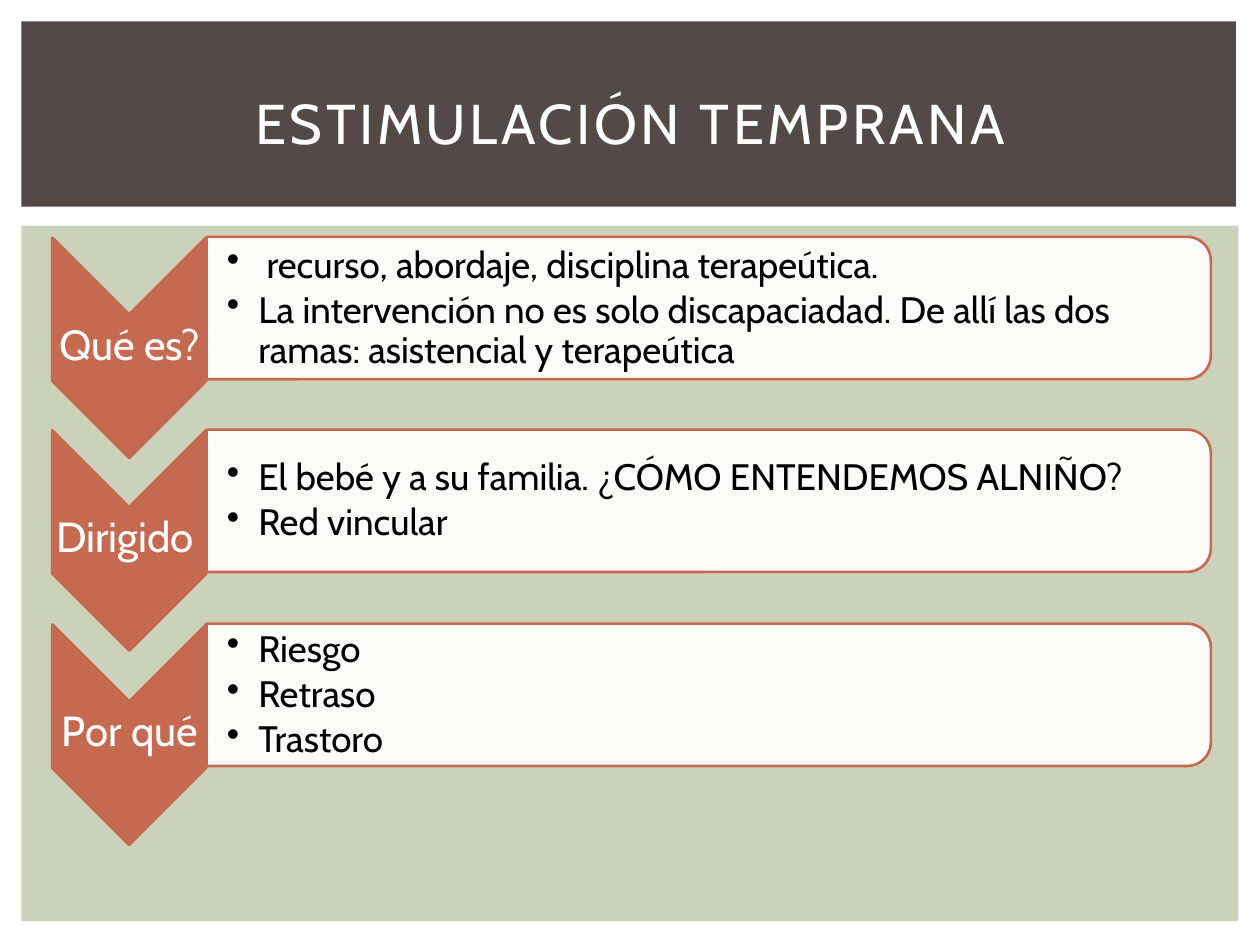
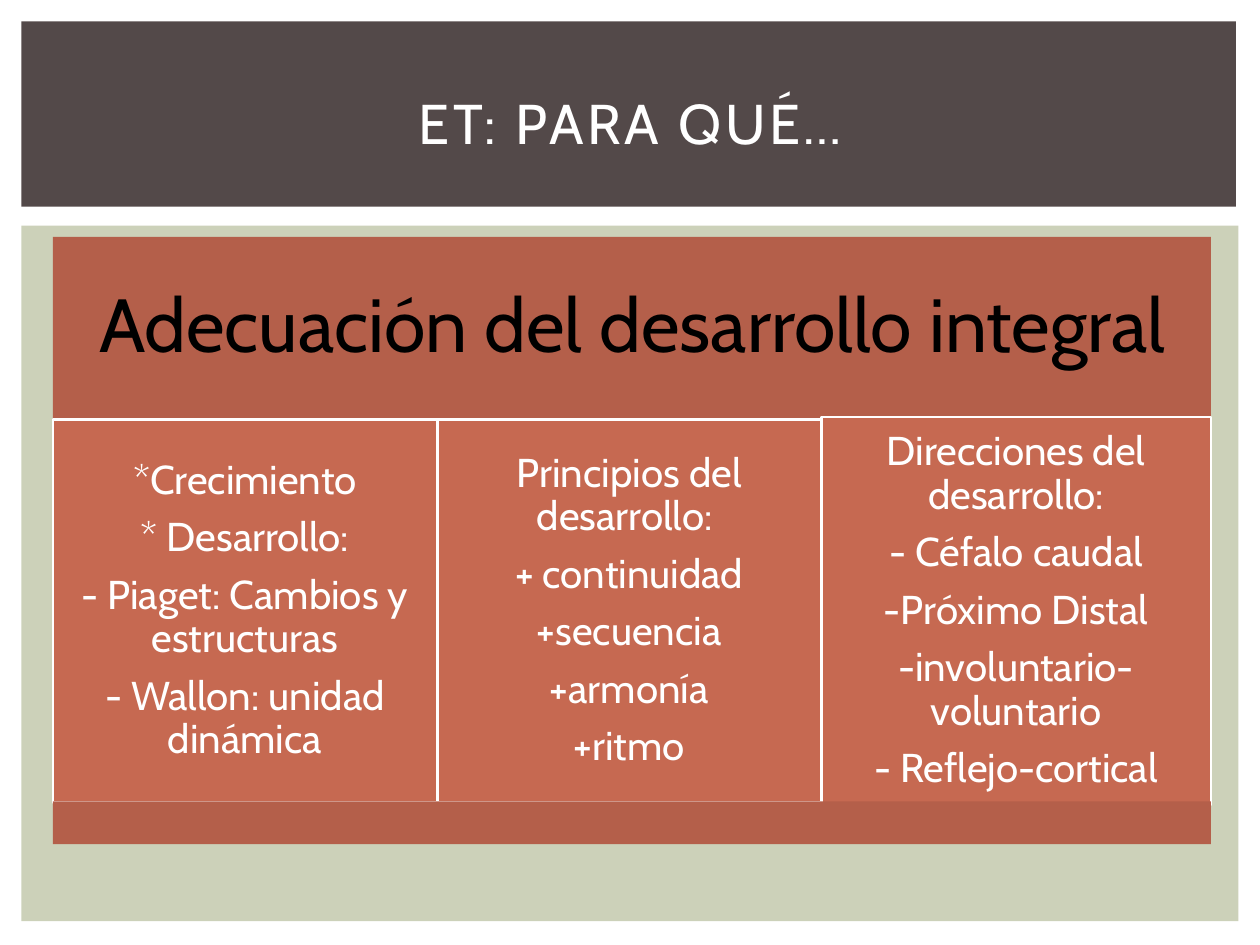
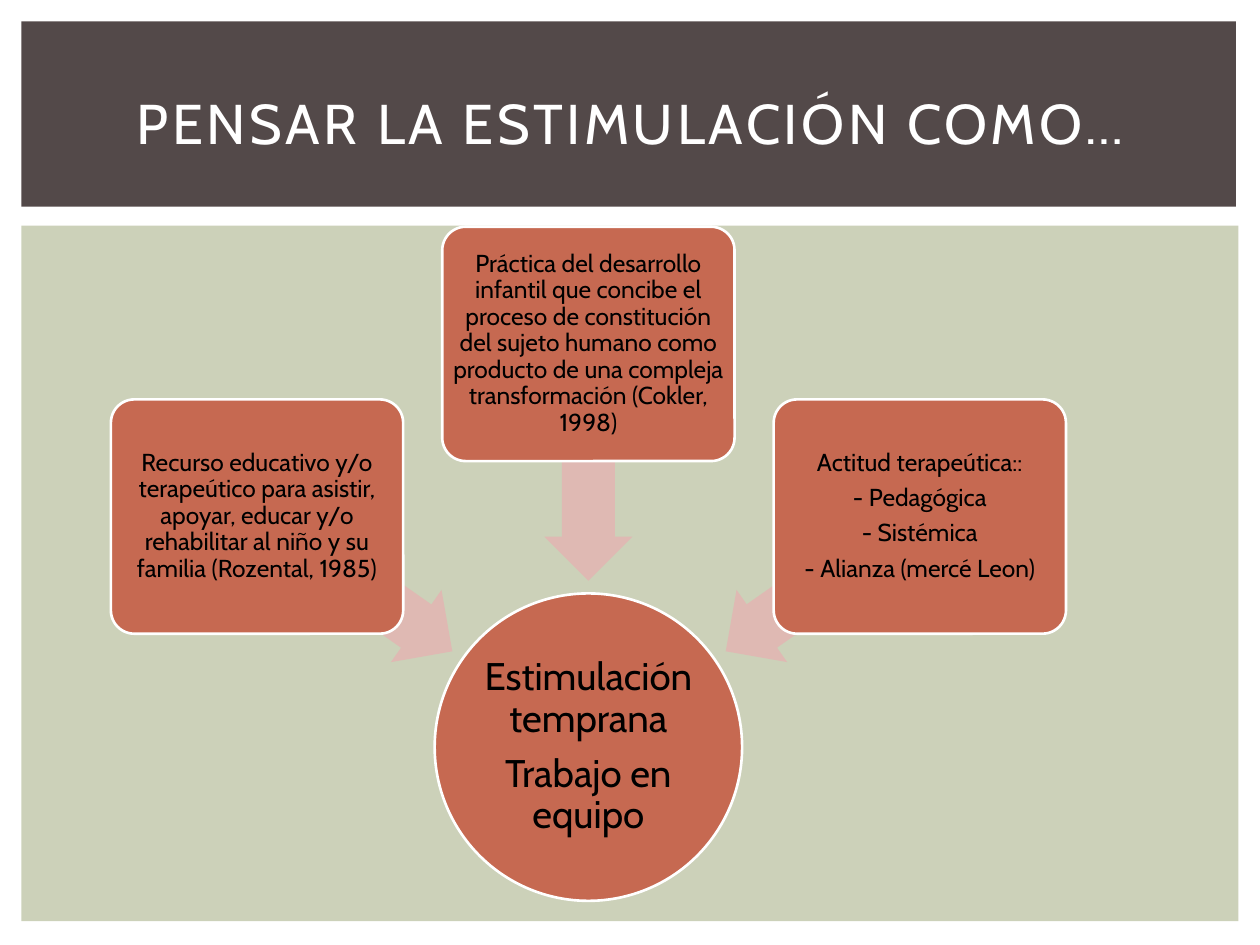
"""Build three slides on early stimulation with a shared title band and panel."""
from dataclasses import dataclass

from lxml.etree import SubElement
from pptx import Presentation
from pptx.dml.color import RGBColor
from pptx.enum.shapes import MSO_SHAPE
from pptx.enum.text import MSO_ANCHOR, PP_ALIGN
from pptx.oxml.ns import qn
from pptx.util import Pt

PIXEL = 9144
FONT = "Cabin"
WHITE, BLACK = "FFFFFF", "000000"
SAGE, BROWN = "CCD1B9", "534949"
CLAY, DARK_CLAY, PINK = "C66951", "B45F4A", "DFB9B3"


@dataclass(frozen=True)
class Box:
    """A rectangle in whole pixels, 100 to the inch."""
    left: int
    top: int
    width: int
    height: int

    def emu(self) -> tuple[int, ...]:
        return tuple(value * PIXEL for value in (self.left, self.top, self.width, self.height))

    def quarter_turned(self) -> "Box":
        """Return the frame that covers this box once rotated by 90 degrees."""
        shift = (self.width - self.height) // 2
        return Box(self.left + shift, self.top - shift, self.height, self.width)


@dataclass(frozen=True)
class TextStyle:
    """How the paragraphs of one text look."""
    size: int
    color: str
    insets: tuple[int, int, int, int] = (2, 2, 2, 2)
    space_after: float = 0.35
    bullet: bool = False


@dataclass(frozen=True)
class Row:
    """A chevron label with its bulleted card."""
    label: str
    points: tuple[str, ...]


@dataclass(frozen=True)
class Idea:
    """A card whose arrow points at the central circle."""
    card_top: int
    arrow_left: int
    arrow_top: int
    rotation: int
    lines: tuple[str, ...]


TITLE_BOX = Box(42, 39, 917, 115)
LABEL_STYLE = TextStyle(24, WHITE)
POINT_STYLE = TextStyle(21, BLACK, (16, 1, 1, 1), 0.15, True)
HEADING_STYLE = TextStyle(43, BLACK, (18, 18, 18, 18))
COLUMN_STYLE = TextStyle(23, WHITE, (10, 10, 10, 10))
CIRCLE_STYLE = TextStyle(22, BLACK)
IDEA_STYLE = TextStyle(14, BLACK, (3, 3, 3, 3))

ROWS = (
    Row("Qué es?", (
        " recurso, abordaje, disciplina terapeútica.",
        "La intervención no es solo discapaciadad. De allí las dos ramas: asistencial y terapeútica",
    )),
    Row("Dirigido ", ("El bebé y a su familia. ¿CÓMO ENTENDEMOS ALNIÑO?", "Red vincular")),
    Row("Por qué", ("Riesgo", "Retraso", "Trastoro")),
)
COLUMNS = (
    (Box(42, 333, 305, 304), ("*Crecimiento", "* Desarrollo:", "- Piaget: Cambios y estructuras",
                              "- Wallon: unidad dinámica")),
    (Box(347, 333, 305, 304), ("Principios del desarrollo: ", "+ continuidad", "+secuencia",
                               "+armonía", "+ritmo")),
    (Box(652, 331, 309, 308), ("Direcciones del desarrollo:", "- Céfalo caudal", "-Próximo Distal",
                               "-involuntario-voluntario", "- Reflejo-cortical")),
)
IDEAS = (
    Idea(317, 188, 428, 215, (
        "Recurso educativo y/o terapeútico para asistir, apoyar, educar y/o rehabilitar "
        "al niño y su familia (Rozental, 1985)",)),
    Idea(180, 373, 332, 270, (
        "Práctica del desarrollo infantil que concibe el proceso de constitución del sujeto "
        "humano como producto de una compleja transformación (Cokler, 1998)",)),
    Idea(317, 559, 428, 325, (
        "Actitud terapeútica::", "- Pedagógica", "- Sistémica", "- Alianza (mercé Leon)")),
)


def rgb(color: str) -> RGBColor:
    """Turn a hex string into a colour."""
    return RGBColor.from_string(color)


def add_figure(slide, kind, box: Box, fill: str, line: str | None = None, rotation: int = 0):
    """Add a flat preset shape with an optional outline."""
    shape = slide.shapes.add_shape(kind, *box.emu())
    shape.shadow.inherit = False
    shape.rotation = rotation
    shape.fill.solid()
    shape.fill.fore_color.rgb = rgb(fill)
    if line:
        shape.line.color.rgb = rgb(line)
        shape.line.width = Pt(1.5)
    else:
        shape.line.fill.background()
    return shape


def set_font(font, size: int, color: str) -> None:
    """Apply the deck font with a size and colour."""
    font.name = FONT
    font.size = Pt(size)
    font.color.rgb = rgb(color)


def add_bullet(para) -> None:
    """Give a paragraph a hanging round bullet."""
    properties = para._p.get_or_add_pPr()
    properties.set("marL", str(25 * PIXEL))
    properties.set("indent", str(-25 * PIXEL))
    SubElement(properties, qn("a:buChar")).set("char", "•")


def write(shape, lines: tuple[str, ...], style: TextStyle) -> None:
    """Fill a shape with one paragraph per line."""
    frame = shape.text_frame
    frame.word_wrap = True
    frame.vertical_anchor = MSO_ANCHOR.MIDDLE
    (frame.margin_left, frame.margin_top,
     frame.margin_right, frame.margin_bottom) = (inset * PIXEL for inset in style.insets)
    for index, line in enumerate(lines):
        para = frame.add_paragraph() if index else frame.paragraphs[0]
        para.text = line
        para.alignment = PP_ALIGN.LEFT if style.bullet else PP_ALIGN.CENTER
        if style.bullet:
            add_bullet(para)
        para.line_spacing = 0.9
        para.space_after = Pt(style.size * style.space_after)
        set_font(para.font, style.size, style.color)


def add_text(slide, box: Box, lines: tuple[str, ...], style: TextStyle) -> None:
    """Add a text box."""
    write(slide.shapes.add_textbox(*box.emu()), lines, style)


def move_bands_to_layout(slide) -> None:
    """Draw the panel and title band and hand them to the slide's layout."""
    bands = ((Box(17, 179, 966, 552), SAGE), (Box(17, 17, 964, 147), BROWN))
    for position, (box, color) in enumerate(bands, start=2):
        band = add_figure(slide, MSO_SHAPE.RECTANGLE, box, color)
        slide.slide_layout.shapes.element.insert(position, band.element)


def add_page(deck, title: str):
    """Add a title-only slide and format its title."""
    page = deck.slides.add_slide(deck.slide_layouts[5])
    heading = page.shapes.title
    heading.left, heading.top, heading.width, heading.height = TITLE_BOX.emu()
    heading.text_frame.vertical_anchor = MSO_ANCHOR.MIDDLE
    para = heading.text_frame.paragraphs[0]
    para.alignment = PP_ALIGN.CENTER
    set_font(para.font, 32, WHITE)
    span = para.add_run()
    span.text = title
    span._r.get_or_add_rPr().set("spc", "200")
    return page


def draw_rows(page) -> None:
    """Draw the chevron list."""
    for index, row in enumerate(ROWS):
        top = 188 + index * 153 + index // 2
        chevron = Box(42, top, 122, 175).quarter_turned()
        add_figure(page, MSO_SHAPE.CHEVRON, chevron, CLAY, CLAY, 90)
        add_text(page, Box(42, top + 61, 122, 52), (row.label,), LABEL_STYLE)
        frame = Box(164, top, 797, 113).quarter_turned()
        card = add_figure(page, MSO_SHAPE.ROUND_2_SAME_RECTANGLE, frame, WHITE, CLAY, 90)
        color = card.element.spPr.find(qn("a:solidFill"))[0]
        SubElement(color, qn("a:alpha")).set("val", "90000")
        add_text(page, Box(164, top + 6, 792, 102), row.points, POINT_STYLE)


def draw_columns(page) -> None:
    """Draw the heading, its three columns and the closing strip."""
    heading = add_figure(page, MSO_SHAPE.RECTANGLE, Box(42, 188, 919, 145), DARK_CLAY)
    write(heading, ("Adecuación del desarrollo integral",), HEADING_STYLE)
    for box, lines in COLUMNS:
        write(add_figure(page, MSO_SHAPE.RECTANGLE, box, CLAY, WHITE), lines, COLUMN_STYLE)
    add_figure(page, MSO_SHAPE.RECTANGLE, Box(42, 636, 919, 34), DARK_CLAY)


def draw_ideas(page) -> None:
    """Draw the circle and the three cards that point at it."""
    circle = add_figure(page, MSO_SHAPE.OVAL, Box(345, 471, 244, 244), CLAY, WHITE)
    write(circle, ("Estimulación temprana", "Trabajo en equipo"), CIRCLE_STYLE)
    for index, idea in enumerate(IDEAS):
        arrow_box = Box(idea.arrow_left, idea.arrow_top, 188, 70)
        arrow = add_figure(page, MSO_SHAPE.LEFT_ARROW, arrow_box, PINK, rotation=idea.rotation)
        arrow.adjustments[0] = 0.6
        card_box = Box(88 + index * 263, idea.card_top, 232, 186)
        card = add_figure(page, MSO_SHAPE.ROUNDED_RECTANGLE, card_box, CLAY, WHITE)
        card.adjustments[0] = 0.1
        write(card, idea.lines, IDEA_STYLE)


def main() -> None:
    """Build and save the deck."""
    deck = Presentation()
    deck.slide_width, deck.slide_height = 1000 * PIXEL, 750 * PIXEL
    pages = (
        ("ESTIMULACIÓN TEMPRANA", draw_rows),
        ("ET: PARA QUÉ…", draw_columns),
        ("PENSAR LA ESTIMULACIÓN COMO…", draw_ideas),
    )
    for index, (title, draw) in enumerate(pages):
        page = add_page(deck, title)
        if index == 0:
            move_bands_to_layout(page)
        draw(page)
    deck.save("out.pptx")


if __name__ == "__main__":
    main()
